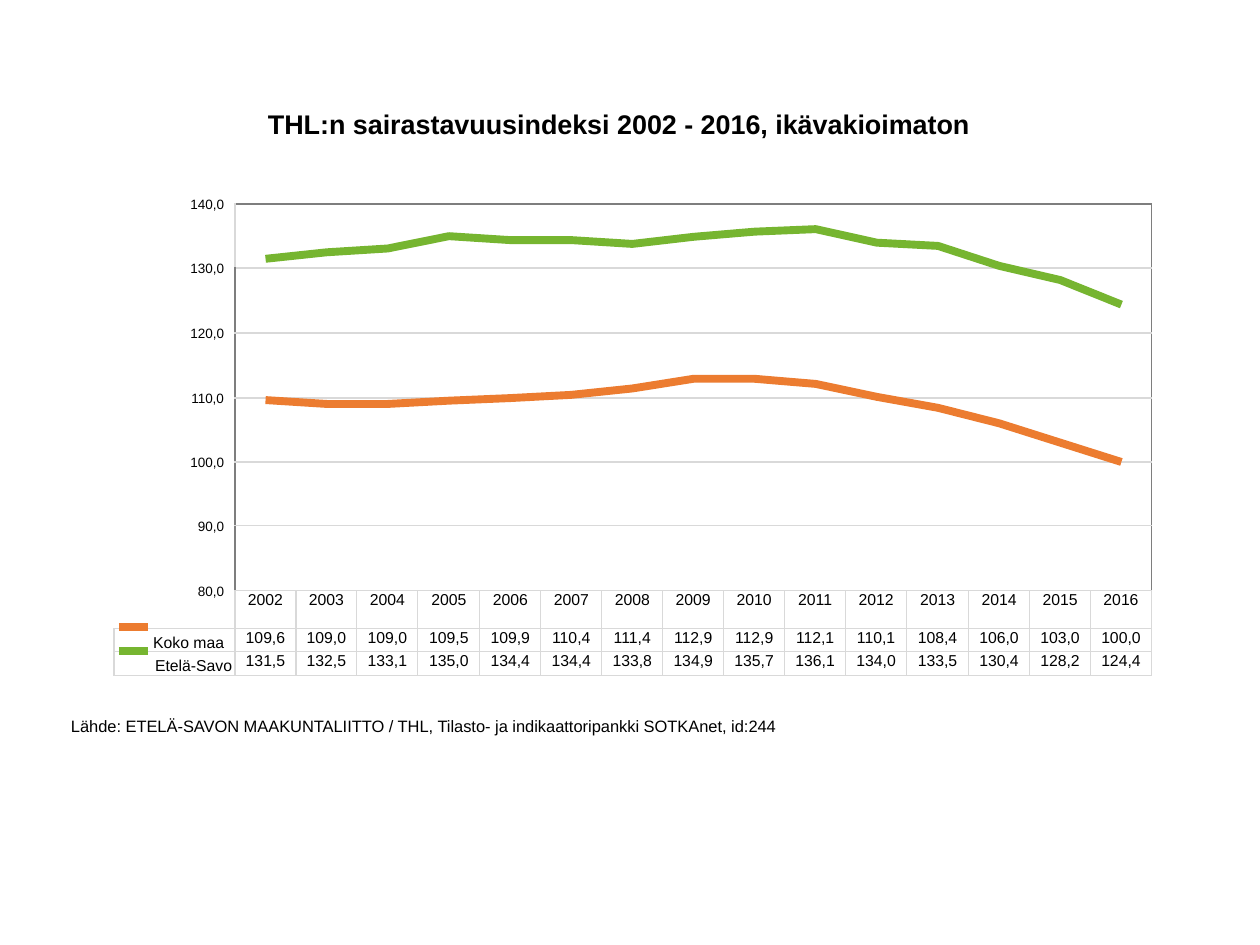
from lxml import etree
from pptx import Presentation
from pptx.dml.color import RGBColor
from pptx.enum.shapes import MSO_CONNECTOR
from pptx.enum.text import MSO_ANCHOR, PP_ALIGN
from pptx.oxml.ns import qn
from pptx.util import Pt

PX = 914400 // 126
STRAIGHT = MSO_CONNECTOR.STRAIGHT
LEFT, CENTER, RIGHT = PP_ALIGN.LEFT, PP_ALIGN.CENTER, PP_ALIGN.RIGHT
TOP = MSO_ANCHOR.TOP
FONT = "Arial"
COLORS = {"text": "000000", "grid": "D9D9D9", "frame": "7E7E7E",
          "Koko maa": "EC7C30", "Etelä-Savo": "76B530"}

YEARS = list(range(2002, 2017))
SERIES = {
    "Koko maa": [109.6, 109.0, 109.0, 109.5, 109.9, 110.4, 111.4, 112.9,
                 112.9, 112.1, 110.1, 108.4, 106.0, 103.0, 100.0],
    "Etelä-Savo": [131.5, 132.5, 133.1, 135.0, 134.4, 134.4, 133.8, 134.9,
                   135.7, 136.1, 134.0, 133.5, 130.4, 128.2, 124.4],
}
AXIS_MIN, AXIS_MAX, AXIS_STEP = 80, 140, 10
BANDS = (AXIS_MAX - AXIS_MIN) // AXIS_STEP
LABEL_WIDTH = 121        # column with the series names
PLOT_HEIGHT = 387        # part of the table behind the lines


def color(name):
    return RGBColor.from_string(COLORS[name])


def decimal(value):
    return f"{value:.1f}".replace(".", ",")


def sizes(total, count):
    """Split a length into whole px parts that add up to it."""
    edges = [round(total * i / count) for i in range(count + 1)]
    return [end - start for start, end in zip(edges, edges[1:])]


def write(frame, text, size, align=LEFT, bold=False):
    para = frame.paragraphs[0]
    para.text = text
    para.alignment = align
    para.font.name = FONT
    para.font.size = Pt(size)
    para.font.bold = bold
    para.font.color.rgb = color("text")
    return para


def add_text(page, box, text, size, align=LEFT, bold=False):
    frame = page.shapes.add_textbox(*(n * PX for n in box)).text_frame
    frame.margin_left = frame.margin_right = 0
    frame.margin_top = frame.margin_bottom = 0
    frame.word_wrap = True
    write(frame, text, size, align, bold)


def set_borders(cell, **sides):
    """Give a cell 0.75 pt borders; sides are L, R, T, B."""
    properties = cell._tc.get_or_add_tcPr()
    names = [side for side in "LRTB" if side in sides]
    for index, side in enumerate(names):
        line = etree.Element(qn(f"a:ln{side}"), w=str(Pt(0.75)))
        fill = etree.SubElement(line, qn("a:solidFill"))
        etree.SubElement(fill, qn("a:srgbClr"), val=COLORS[sides[side]])
        properties.insert(index, line)


def add_data_table(page, box):
    left, top, width, height = box
    rows, columns = BANDS + 1 + len(SERIES), 1 + len(YEARS)
    table = page.shapes.add_table(rows, columns, *(n * PX for n in box)).table
    table.first_row = table.horz_banding = False
    widths = [LABEL_WIDTH] + sizes(width - LABEL_WIDTH, len(YEARS))
    heights = sizes(PLOT_HEIGHT, BANDS) + sizes(height - PLOT_HEIGHT, rows - BANDS)
    for column, size in zip(table.columns, widths):
        column.width = size * PX
    for row, size in zip(table.rows, heights):
        row.height = size * PX
    for cell in table.iter_cells():
        cell.fill.background()
        cell.margin_left = cell.margin_right = 0
        cell.margin_top = cell.margin_bottom = 0
        cell.vertical_anchor = TOP

    # Empty corner and the bands between gridlines
    table.cell(0, 0).merge(table.cell(BANDS, 0))
    set_borders(table.cell(0, 0), R="grid", B="grid")
    for band in range(BANDS):
        first = table.cell(band, 1)
        first.merge(table.cell(band, columns - 1))
        set_borders(first, L="frame" if band else "grid", R="frame",
                    T="grid" if band else "frame", B="grid")

    # Years, series names and values
    lines = [[""] + [str(year) for year in YEARS]]
    lines += [[name] + [decimal(v) for v in values]
              for name, values in SERIES.items()]
    for row, line in enumerate(lines, BANDS):
        for column, text in enumerate(line):
            if not text:
                continue
            cell = table.cell(row, column)
            set_borders(cell, L="grid", R="grid", T="grid", B="grid")
            para = write(cell.text_frame, text, 9, CENTER if column else RIGHT)
            if column == 0:
                para.line_spacing = Pt(13)
                cell.margin_right = (11 if row == BANDS + 1 else 3) * PX


def add_legend_keys(page, box):
    left, top, width, height = box
    for index, name in enumerate(SERIES):
        y = top + index * height
        key = page.shapes.add_connector(
            STRAIGHT, left * PX, y * PX, (left + width) * PX, y * PX)
        key.line.color.rgb = color(name)
        key.line.width = Pt(4.5)
        etree.SubElement(key._element.spPr, qn("a:effectLst"))


def add_series_lines(page, box):
    left, top, width, height = box
    step = width / len(YEARS)
    scale = height / (AXIS_MAX - AXIS_MIN)
    for name, values in SERIES.items():
        points = [(round((left + (i + 0.5) * step) * PX),
                   round((top + (AXIS_MAX - value) * scale) * PX))
                  for i, value in enumerate(values)]
        builder = page.shapes.build_freeform(*points[0])
        builder.add_line_segments(points[1:], close=False)
        curve = builder.convert_to_shape()
        curve.shadow.inherit = False
        curve.fill.background()
        curve.line.color.rgb = color(name)
        curve.line.width = Pt(4.5)


def add_axis_labels(page, box):
    left, top, width, height = box
    label_height = 16
    for index in range(BANDS + 1):
        y = round(top + index * height / BANDS) - label_height // 2
        add_text(page, (left, y, width, label_height),
                 decimal(AXIS_MAX - index * AXIS_STEP), 7.7, RIGHT)


def add_chart_region(page, box):
    left, top, width, height = box
    plot = (left + LABEL_WIDTH, top, width - LABEL_WIDTH, PLOT_HEIGHT)
    add_data_table(page, box)
    add_legend_keys(page, (left + 5, top + 423, 29, 24))
    add_series_lines(page, plot)
    add_axis_labels(page, (left + 70, top, 40, PLOT_HEIGHT))


def main():
    deck = Presentation()
    deck.slide_width, deck.slide_height = 1260 * PX, 945 * PX
    page = deck.slides.add_slide(deck.slide_layouts[6])
    # Source line, chart with its data table, title
    add_text(page, (71, 716, 718, 20),
             "Lähde: ETELÄ-SAVON MAAKUNTALIITTO / THL, Tilasto- ja "
             "indikaattoripankki SOTKAnet, id:244", 9.4)
    add_chart_region(page, (114, 204, 1038, 458))
    add_text(page, (268, 108, 706, 33),
             "THL:n sairastavuusindeksi 2002 - 2016, ikävakioimaton",
             15.4, bold=True)
    deck.save("out.pptx")


if __name__ == "__main__":
    main()
